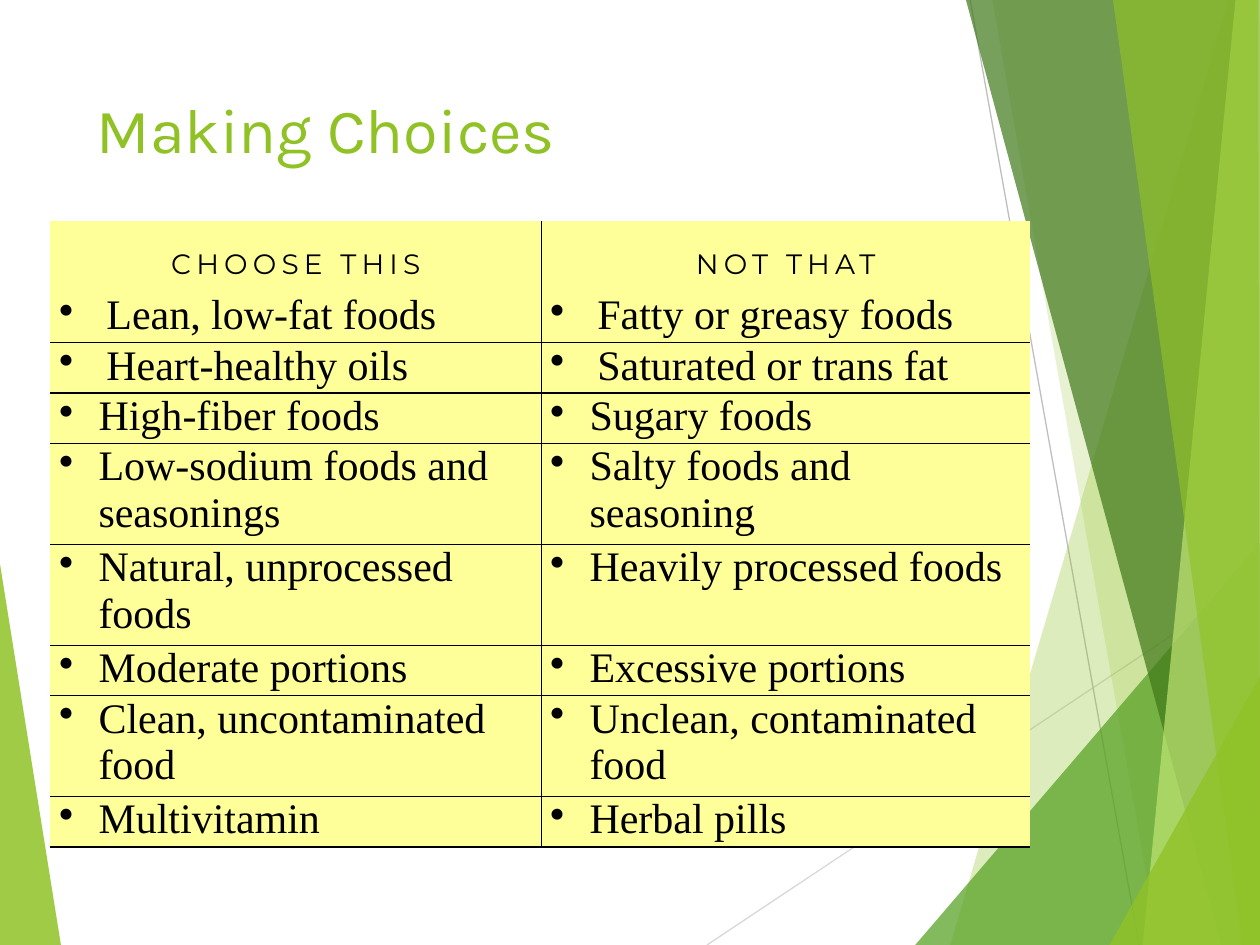
import dataclasses

import lxml.etree
import pptx
import pptx.dml.color
import pptx.enum.shapes
import pptx.enum.text
import pptx.oxml.ns
import pptx.util

Pt = pptx.util.Pt
qn = pptx.oxml.ns.qn


@dataclasses.dataclass(frozen=True)
class Theme:
    lime: str = "90C226"
    green: str = "54A021"
    forest: str = "3F7819"
    pale: str = "C0E474"
    light_rule: str = "D9D9D9"
    grey_rule: str = "BFBFBF"
    ink: str = "000000"
    cell: str = "FFFF99"
    title_font: str = "Karla"
    heading_font: str = "Montserrat"
    body_font: str = "Times New Roman"
    title_size: int = 36
    heading_size: int = 16
    body_size: int = 24
    rule_width: float = 0.75
    border_width: float = 1


def rgb(value):
    return pptx.dml.color.RGBColor.from_string(value)


def add_xml(parent, tag, **attributes):
    return lxml.etree.SubElement(parent, qn(tag), attributes)


class SlideBuilder:
    def __init__(self, slide, theme):
        self.slide = slide
        self.theme = theme

    def facet(self, points, color, opacity):
        """Draw a translucent polygon from corner points."""
        outline = self.slide.shapes.build_freeform(*points[0], scale=Pt(1))
        outline.add_line_segments(points[1:], close=True)
        shape = outline.convert_to_shape()
        shape.shadow.inherit = False
        shape.line.fill.background()
        shape.fill.solid()
        shape.fill.fore_color.rgb = rgb(color)
        color_node = shape.fill._xPr.find(".//" + qn("a:srgbClr"))
        add_xml(color_node, "a:alpha", val=str(opacity * 1000))

    def rule(self, start, end, color):
        line = self.slide.shapes.add_connector(
            pptx.enum.shapes.MSO_CONNECTOR.STRAIGHT,
            *(Pt(value) for value in start + end))
        line.line.color.rgb = rgb(color)
        line.line.width = Pt(self.theme.rule_width)
        add_xml(line._element.spPr, "a:effectLst")

    def style_text(self, paragraph, font, size, color):
        for run in paragraph.runs:
            run.font.name = font
            run.font.size = Pt(size)
            run.font.color.rgb = rgb(color)

    def title(self, text, left, top, width, height):
        box = self.slide.shapes.add_textbox(Pt(left), Pt(top), Pt(width), Pt(height))
        box.text_frame.word_wrap = True
        box.text_frame.text = text
        self.style_text(box.text_frame.paragraphs[0], self.theme.title_font,
                        self.theme.title_size, self.theme.lime)

    def border(self, cell, visible_sides):
        """Rule the given sides (L, R, T, B) and clear the others."""
        properties = cell._tc.get_or_add_tcPr()
        for side in "LRTB":
            line = add_xml(properties, f"a:ln{side}",
                           w=str(Pt(self.theme.border_width)))
            if side in visible_sides:
                fill = add_xml(line, "a:solidFill")
                add_xml(fill, "a:srgbClr", val=self.theme.ink)
            else:
                add_xml(line, "a:noFill")

    def heading(self, cell, text):
        cell.margin_top = Pt(19)
        cell.text_frame.text = text
        paragraph = cell.text_frame.paragraphs[0]
        paragraph.alignment = pptx.enum.text.PP_ALIGN.CENTER
        paragraph.line_spacing = Pt(16)
        self.style_text(paragraph, self.theme.heading_font,
                        self.theme.heading_size, self.theme.ink)
        paragraph.runs[0].font._element.set("spc", "300")

    def bullet(self, cell, text, indent):
        cell.text_frame.text = text
        paragraph = cell.text_frame.paragraphs[0]
        properties = paragraph._p.get_or_add_pPr()
        properties.set("marL", str(Pt(indent)))
        properties.set("indent", str(-Pt(indent)))
        add_xml(properties, "a:buChar", char="•")
        self.style_text(paragraph, self.theme.body_font,
                        self.theme.body_size, self.theme.ink)

    def choices_table(self, left, top, widths, headings, choices):
        """choices holds (good, bad, text lines, indent) for each row."""
        heights = [41] + [26.5 * lines for _, _, lines, _ in choices]
        frame = self.slide.shapes.add_table(
            len(heights), len(widths), Pt(left), Pt(top),
            Pt(sum(widths)), Pt(sum(heights)))
        table = frame.table
        table.first_row = False
        table.horz_banding = False
        for column, width in zip(table.columns, widths):
            column.width = Pt(width)
        for row, height in zip(table.rows, heights):
            row.height = Pt(height)
        for row_index in range(len(heights)):
            for column_index, inner_side in enumerate("RL"):
                cell = table.cell(row_index, column_index)
                cell.margin_left = cell.margin_right = Pt(5)
                cell.margin_top = cell.margin_bottom = 0
                sides = inner_side
                if row_index > 0:
                    sides += "B"
                if row_index > 1:
                    sides += "T"
                self.border(cell, sides)
                cell.fill.solid()
                cell.fill.fore_color.rgb = rgb(self.theme.cell)
                if row_index == 0:
                    self.heading(cell, headings[column_index])
                else:
                    choice = choices[row_index - 1]
                    self.bullet(cell, choice[column_index], choice[3])


def main():
    presentation = pptx.Presentation()
    presentation.slide_width = Pt(720)
    presentation.slide_height = Pt(540)
    theme = Theme()
    builder = SlideBuilder(
        presentation.slides.add_slide(presentation.slide_layouts[6]), theme)

    builder.facet([(-0.7, 316), (35.3, 540.7), (-0.7, 540)], theme.lime, 85)
    builder.rule((404, 540), (720.7, 329), theme.light_rule)
    builder.rule((554.4, 0), (650.9, 540), theme.grey_rule)

    right = 720.7
    facets = [
        ([(702, 0), (542.9, 540), (right, 540), (right, 0)], theme.lime, 30),
        ([(567.4, 0), (661.7, 540), (right, 540), (right, 0)], theme.lime, 20),
        ([(522.7, 540), (right, 308.9), (right, 540)], theme.green, 72),
        ([(552.2, 0), (698.4, 540), (right, 540), (right, 0)], theme.forest, 70),
        ([(706.3, 0), (653, 540), (right, 540), (right, 0)], theme.pale, 70),
        ([(636, 0), (710, 540), (720, 540), (718.6, 0)], theme.lime, 65),
        ([(634.3, 540), (right, 385.2), (right, 540)], theme.lime, 80),
    ]
    for points, color, opacity in facets:
        builder.facet(points, color, opacity)

    builder.title("Making Choices", 48.2, 48.2, 500, 104)
    wide, narrow = 27, 22.5
    builder.choices_table(28.8, 126, (280.6, 279.4), ("CHOOSE THIS", "NOT THAT"), [
        ("Lean, low-fat foods", "Fatty or greasy foods", 1, wide),
        ("Heart-healthy oils", "Saturated or trans fat", 1, wide),
        ("High-fiber foods", "Sugary foods", 1, narrow),
        ("Low-sodium foods and seasonings", "Salty foods and seasoning", 2, narrow),
        ("Natural, unprocessed foods", "Heavily processed foods", 2, narrow),
        ("Moderate portions", "Excessive portions", 1, narrow),
        ("Clean, uncontaminated food", "Unclean, contaminated food", 2, narrow),
        ("Multivitamin", "Herbal pills", 1, narrow),
    ])
    presentation.save("out.pptx")


if __name__ == "__main__":
    main()
